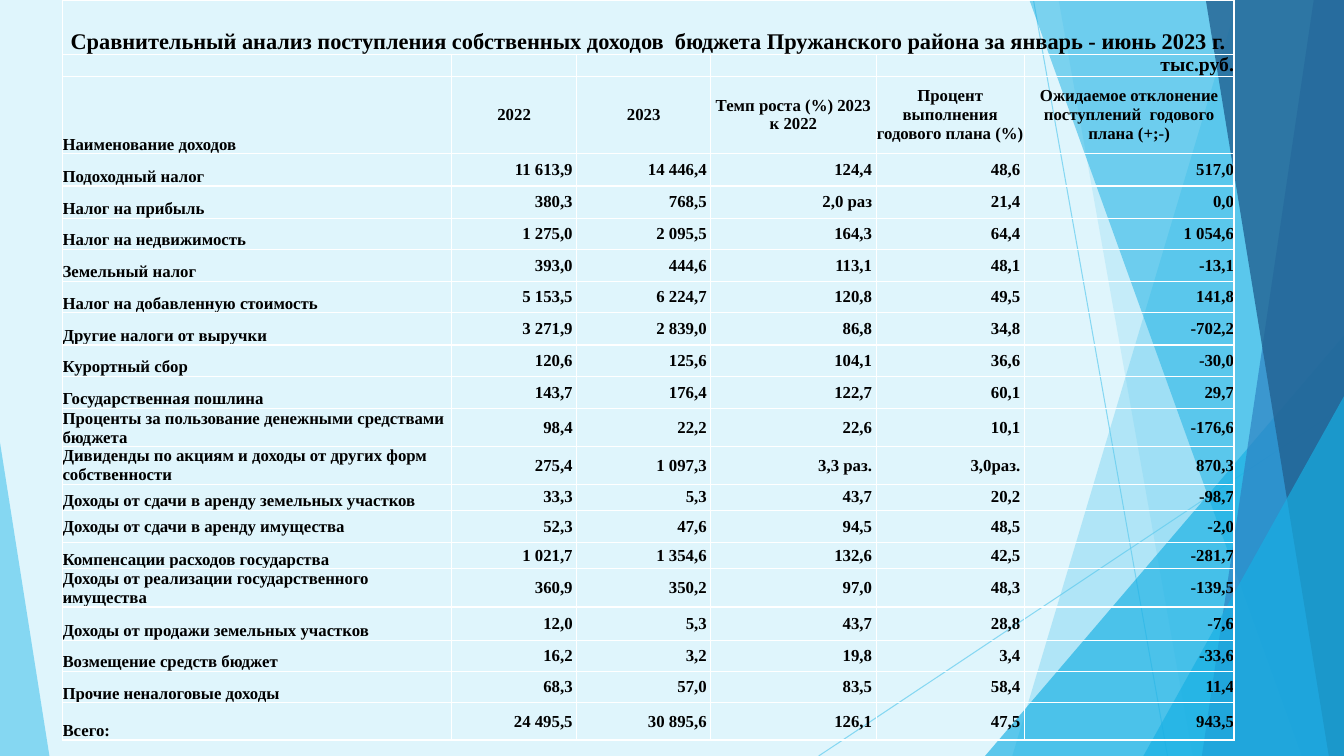
from dataclasses import dataclass

import lxml.etree
import pptx
import pptx.dml.color
import pptx.enum.shapes
import pptx.enum.text
import pptx.oxml.ns
import pptx.util

Inches = pptx.util.Inches
qn = pptx.oxml.ns.qn
ALIGN = pptx.enum.text.PP_ALIGN
ANCHOR = pptx.enum.text.MSO_ANCHOR
FONT = "Times New Roman"
COLORS = {
    "background": "DFF5FC", "sky": "5FCBEF", "azure": "17B0E4",
    "blue": "2E83C3", "navy": "226292", "border": "FFFFFF", "text": "000000",
}


@dataclass(frozen=True)
class Ray:
    start: tuple[float, float]
    end: tuple[float, float]


@dataclass(frozen=True)
class Facet:
    points: tuple[tuple[float, float], ...]
    color: str
    opacity: int


@dataclass(frozen=True)
class Corner:
    left: float
    top: float
    width: float
    height: float
    apex: int
    color: str
    opacity: int


@dataclass(frozen=True)
class Income:
    name: str
    amounts: tuple[str, ...]
    name_anchor: ANCHOR = ANCHOR.BOTTOM


def right_facet(top_x: float, bottom_x: float, color: str, opacity: int) -> Facet:
    return Facet(((top_x, 0), (13.33, 0), (13.33, 7.5), (bottom_x, 7.5)), color, opacity)


DECOR = (
    Ray((10.25, 0), (11.58, 7.5)),
    Ray((13.33, 4.03), (8.12, 7.5)),
    right_facet(12.28, 10.04, "sky", 36),
    right_facet(10.5, 11.83, "sky", 20),
    Corner(9.77, 3.33, 3.56, 4.17, 1, "azure", 66),
    right_facet(10.21, 12.91, "azure", 50),
    right_facet(13.03, 11.92, "blue", 70),
    right_facet(11.96, 13.18, "navy", 80),
    Corner(11.34, 3.93, 1.99, 3.57, 1, "azure", 66),
    Corner(0, 4.39, 0.49, 3.11, 0, "sky", 70),
)
TITLE = ("Сравнительный анализ поступления собственных доходов  бюджета "
         "Пружанского района за январь - июнь 2023 г.")
HEADINGS = (
    "Наименование доходов", "2022", "2023", "Темп роста (%) 2023 к 2022",
    "Процент выполнения годового плана (%)",
    "Ожидаемое отклонение поступлений  годового плана (+;-)",
)
INCOMES = (
    Income("Подоходный налог", ("11 613,9", "14 446,4", "124,4", "48,6", "517,0")),
    Income("Налог на прибыль", ("380,3", "768,5", "2,0 раз", "21,4", "0,0")),
    Income("Налог на недвижимость", ("1 275,0", "2 095,5", "164,3", "64,4", "1 054,6")),
    Income("Земельный налог", ("393,0", "444,6", "113,1", "48,1", "-13,1")),
    Income("Налог на добавленную стоимость", ("5 153,5", "6 224,7", "120,8", "49,5", "141,8")),
    Income("Другие налоги от выручки", ("3 271,9", "2 839,0", "86,8", "34,8", "-702,2")),
    Income("Курортный сбор", ("120,6", "125,6", "104,1", "36,6", "-30,0")),
    Income("Государственная пошлина", ("143,7", "176,4", "122,7", "60,1", "29,7")),
    Income("Проценты за пользование денежными средствами бюджета",
           ("98,4", "22,2", "22,6", "10,1", "-176,6")),
    Income("Дивиденды по акциям и доходы от других форм собственности",
           ("275,4", "1 097,3", "3,3 раз.", "3,0раз.", "870,3")),
    Income("Доходы от сдачи в аренду земельных участков",
           ("33,3", "5,3", "43,7", "20,2", "-98,7")),
    Income("Доходы от сдачи в аренду имущества",
           ("52,3", "47,6", "94,5", "48,5", "-2,0"), ANCHOR.MIDDLE),
    Income("Компенсации расходов государства",
           ("1 021,7", "1 354,6", "132,6", "42,5", "-281,7")),
    Income("Доходы от реализации государственного имущества",
           ("360,9", "350,2", "97,0", "48,3", "-139,5")),
    Income("Доходы от продажи земельных участков", ("12,0", "5,3", "43,7", "28,8", "-7,6")),
    Income("Возмещение средств бюджет", ("16,2", "3,2", "19,8", "3,4", "-33,6")),
    Income("Прочие неналоговые доходы", ("68,3", "57,0", "83,5", "58,4", "11,4")),
    Income("Всего:", ("24 495,5", "30 895,6", "126,1", "47,5", "943,5")),
)
COLUMN_WIDTHS = (3.86, 1.24, 1.33, 1.64, 1.47, 2.08)
ROW_HEIGHTS = (0.54, 0.21, 0.77, 0.32, 0.32, 0.31, 0.32, 0.31, 0.32, 0.31, 0.32,
               0.38, 0.37, 0.26, 0.32, 0.26, 0.38, 0.33, 0.31, 0.31, 0.37)


def rgb(name: str) -> pptx.dml.color.RGBColor:
    return pptx.dml.color.RGBColor.from_string(COLORS[name])


def set_opacity(element, opacity: int) -> None:
    color = next(element.iter(qn("a:srgbClr")))
    lxml.etree.SubElement(color, qn("a:alpha"), val=str(opacity * 1000))


def draw_ray(slide, ray: Ray) -> None:
    line = slide.shapes.add_connector(
        pptx.enum.shapes.MSO_CONNECTOR.STRAIGHT,
        *(Inches(value) for value in ray.start + ray.end))
    line.line.color.rgb = rgb("sky")
    line.line.width = pptx.util.Pt(0.75)
    properties = line.line._get_or_add_ln().getparent()
    set_opacity(properties, 70)
    lxml.etree.SubElement(properties, qn("a:effectLst"))


def paint(shape, color: str, opacity: int) -> None:
    shape.shadow.inherit = False
    shape.fill.solid()
    shape.fill.fore_color.rgb = rgb(color)
    shape.line.fill.background()
    set_opacity(shape.element.spPr, opacity)


def draw_facet(slide, facet: Facet) -> None:
    corners = [(Inches(x), Inches(y)) for x, y in facet.points]
    builder = slide.shapes.build_freeform(*corners[0])
    builder.add_line_segments(corners[1:], close=True)
    paint(builder.convert_to_shape(), facet.color, facet.opacity)


def draw_corner(slide, corner: Corner) -> None:
    triangle = slide.shapes.add_shape(
        pptx.enum.shapes.MSO_SHAPE.ISOSCELES_TRIANGLE, Inches(corner.left),
        Inches(corner.top), Inches(corner.width), Inches(corner.height))
    triangle.adjustments[0] = corner.apex
    paint(triangle, corner.color, corner.opacity)


def format_cell(cell) -> None:
    cell.margin_left = cell.margin_right = cell.margin_top = cell.margin_bottom = 0
    properties = cell._tc.get_or_add_tcPr()
    for side in ("lnL", "lnR", "lnT", "lnB"):
        border = lxml.etree.SubElement(properties, qn(f"a:{side}"), w="12700")
        fill = lxml.etree.SubElement(border, qn("a:solidFill"))
        lxml.etree.SubElement(fill, qn("a:srgbClr"), val=COLORS["border"])
    cell.fill.background()
    paragraph = cell.text_frame.paragraphs[0]
    lxml.etree.SubElement(paragraph._p, qn("a:endParaRPr"), sz="1200")


def write(cell, text: str, align: ALIGN, anchor: ANCHOR, size: int = 12) -> None:
    cell.vertical_anchor = anchor
    paragraph = cell.text_frame.paragraphs[0]
    paragraph.text = text
    paragraph.alignment = align
    font = paragraph.runs[0].font
    font.name, font.size, font.bold = FONT, pptx.util.Pt(size), True
    font.color.rgb = rgb("text")


def draw_income_table(slide) -> None:
    table = slide.shapes.add_table(
        len(ROW_HEIGHTS), len(COLUMN_WIDTHS), Inches(0.62), 0,
        Inches(sum(COLUMN_WIDTHS)), Inches(sum(ROW_HEIGHTS))).table
    table.first_row = table.horz_banding = False
    for column, width in zip(table.columns, COLUMN_WIDTHS):
        column.width = Inches(width)
    for row, height in zip(table.rows, ROW_HEIGHTS):
        row.height = Inches(height)
    for cell in table.iter_cells():
        format_cell(cell)
    table.cell(0, 0).merge(table.cell(0, 5))
    write(table.cell(0, 0), TITLE, ALIGN.CENTER, ANCHOR.BOTTOM, 16)
    write(table.cell(1, 5), "тыс.руб.", ALIGN.RIGHT, ANCHOR.BOTTOM, 14)
    write(table.cell(2, 0), HEADINGS[0], ALIGN.LEFT, ANCHOR.BOTTOM)
    for column, heading in enumerate(HEADINGS[1:], 1):
        write(table.cell(2, column), heading, ALIGN.CENTER, ANCHOR.MIDDLE)
    for row, income in enumerate(INCOMES, 3):
        write(table.cell(row, 0), income.name, ALIGN.LEFT, income.name_anchor)
        for column, amount in enumerate(income.amounts, 1):
            cell = table.cell(row, column)
            cell.margin_right = Inches(0.04 if column < 5 else 0)
            write(cell, amount, ALIGN.RIGHT, ANCHOR.MIDDLE)


def main() -> None:
    presentation = pptx.Presentation()
    presentation.slide_width, presentation.slide_height = Inches(13.33), Inches(7.5)
    slide = presentation.slides.add_slide(presentation.slide_layouts[6])
    slide.background.fill.solid()
    slide.background.fill.fore_color.rgb = rgb("background")
    painters = {Ray: draw_ray, Facet: draw_facet, Corner: draw_corner}
    for part in DECOR:
        painters[type(part)](slide, part)
    draw_income_table(slide)
    presentation.save("out.pptx")


if __name__ == "__main__":
    main()
